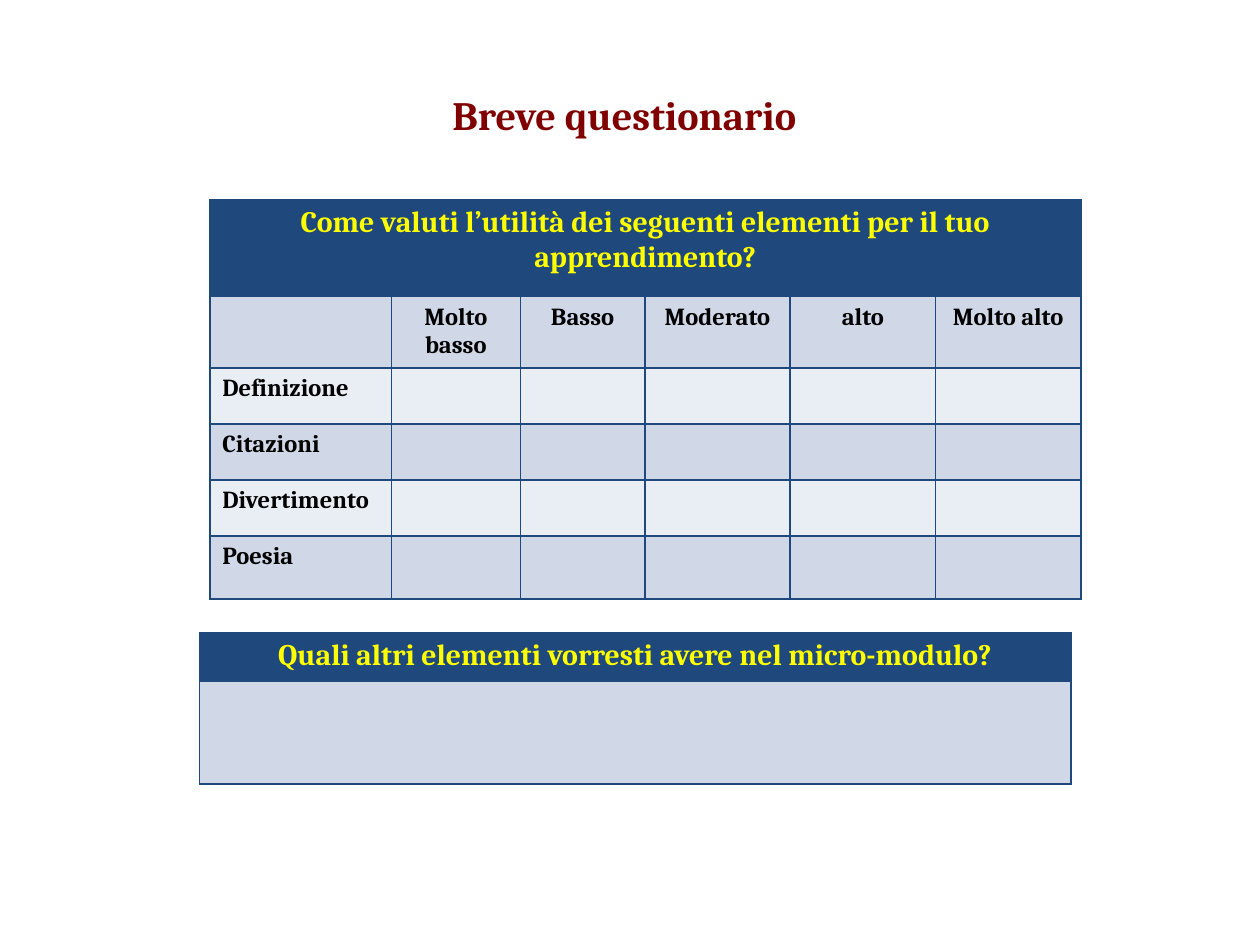
import dataclasses

import lxml.etree
import pptx
import pptx.dml.color
import pptx.enum.text
import pptx.oxml.ns
import pptx.util

Cm = pptx.util.Cm
Color = pptx.dml.color.RGBColor
Align = pptx.enum.text.PP_ALIGN

NAVY = Color(0x1F, 0x49, 0x7D)
YELLOW = Color(0xFF, 0xFF, 0x00)
BLACK = Color(0x00, 0x00, 0x00)
MAROON = Color(0x80, 0x00, 0x00)
BLUE = Color(0xD0, 0xD8, 0xE8)
PALE = Color(0xE9, 0xED, 0xF4)


def style(size: int, color: Color) -> dict:
    return {"name": "Cambria", "size": pptx.util.Pt(size), "bold": True, "color": color}


TITLE = style(23, MAROON)
HEAD = style(17, YELLOW)
BODY = style(14, BLACK)


@dataclasses.dataclass
class Grid:
    left: float
    top: float
    cols: list[float]
    rows: list[float]
    head: str
    body: list[list[str]]


GRIDS = [
    Grid(
        4.23, 4.02,
        [3.66, 2.6, 2.51, 2.93, 2.93, 2.93],
        [1.96, 1.4, 1.13, 1.13, 1.13, 1.27],
        "Come valuti l’utilità dei seguenti elementi per il tuo apprendimento?",
        [["", "Molto basso", "Basso", "Moderato", "alto", "Molto alto"]]
        + [[name] + [""] * 5 for name in ("Definizione", "Citazioni", "Divertimento", "Poesia")],
    ),
    Grid(
        4.02, 12.75, [17.57], [0.97, 2.08],
        "Quali altri elementi vorresti avere nel micro-modulo?",
        [[""]],
    ),
]


def write(frame: pptx.text.text.TextFrame, text: str, look: dict, align: Align) -> None:
    para = frame.paragraphs[0]
    para.alignment = align
    run = para.add_run()
    run.text = text
    for key, value in look.items():
        if key == "color":
            run.font.color.rgb = value
        else:
            setattr(run.font, key, value)


def border(cell: pptx.table._Cell) -> None:
    qn = pptx.oxml.ns.qn
    props = cell._tc.get_or_add_tcPr()
    for side in "LRTB":
        line = lxml.etree.SubElement(props, qn(f"a:ln{side}"), w="12700")
        fill = lxml.etree.SubElement(line, qn("a:solidFill"))
        lxml.etree.SubElement(fill, qn("a:srgbClr"), val=str(NAVY))


def paint(cell: pptx.table._Cell, color: Color) -> None:
    border(cell)
    cell.fill.solid()
    cell.fill.fore_color.rgb = color


def draw(slide: pptx.slide.Slide, grid: Grid) -> None:
    table = slide.shapes.add_table(
        len(grid.rows), len(grid.cols), Cm(grid.left), Cm(grid.top),
        Cm(sum(grid.cols)), Cm(sum(grid.rows)),
    ).table
    table.first_row = table.horz_banding = False
    for col, width in zip(table.columns, grid.cols):
        col.width = Cm(width)
    for row, height in zip(table.rows, grid.rows):
        row.height = Cm(height)

    for cell in table.rows[0].cells:
        paint(cell, NAVY)
    first = table.cell(0, 0)
    if len(grid.cols) > 1:
        first.merge(table.cell(0, len(grid.cols) - 1))
    write(first.text_frame, grid.head, HEAD, Align.CENTER)

    for r, texts in enumerate(grid.body, 1):
        for c, text in enumerate(texts):
            cell = table.cell(r, c)
            paint(cell, BLUE if r % 2 else PALE)
            if text:
                write(cell.text_frame, text, BODY, Align.CENTER if c else Align.LEFT)


def main() -> None:
    deck = pptx.Presentation()
    deck.slide_width, deck.slide_height = Cm(25.4), Cm(19.05)
    slide = deck.slides.add_slide(deck.slide_layouts[6])
    title = slide.shapes.add_textbox(Cm(5.92), Cm(1.7), Cm(13.34), Cm(1.6))
    title.text_frame.word_wrap = True
    write(title.text_frame, "Breve questionario", TITLE, Align.CENTER)
    for grid in GRIDS:
        draw(slide, grid)
    deck.save("out.pptx")


if __name__ == "__main__":
    main()
